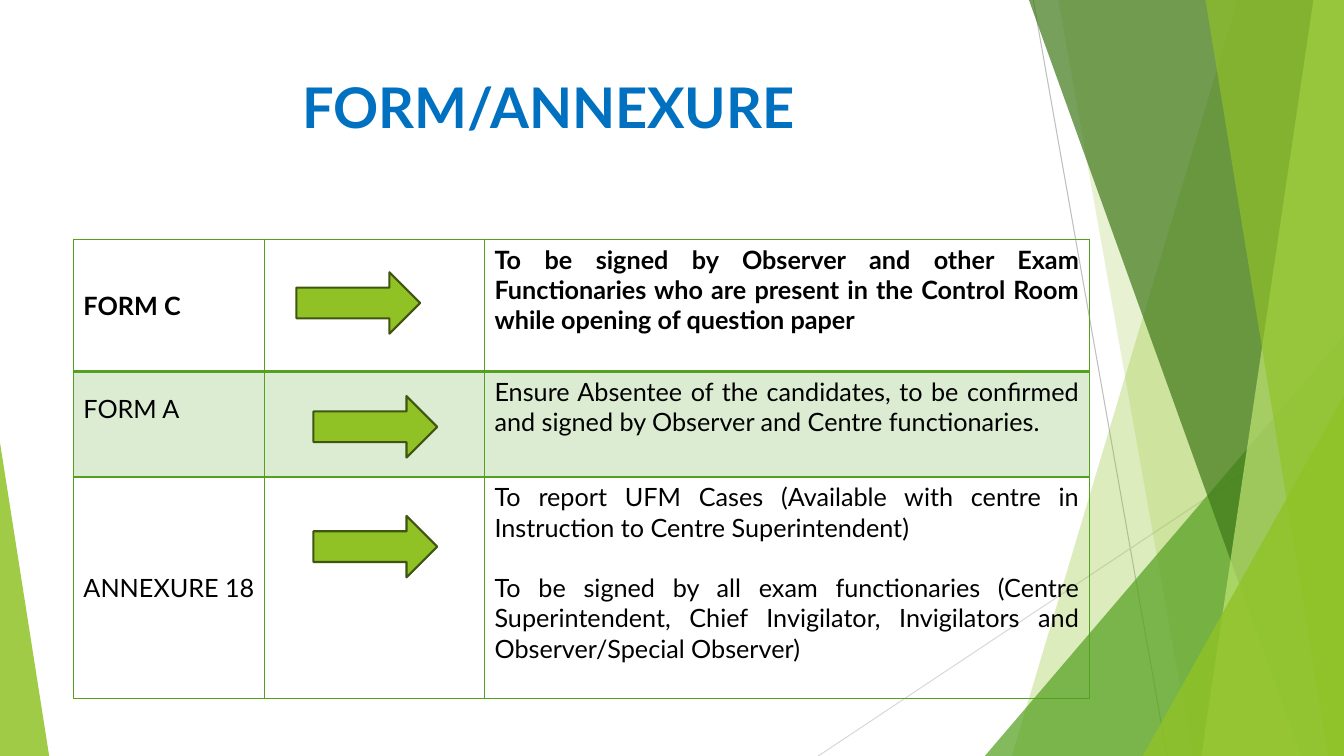
from lxml.etree import SubElement
from pptx import Presentation
from pptx.dml.color import RGBColor
from pptx.enum.shapes import MSO_CONNECTOR, MSO_SHAPE
from pptx.enum.text import MSO_ANCHOR, PP_ALIGN
from pptx.oxml import parse_xml
from pptx.oxml.ns import nsdecls, qn
from pptx.util import Cm, Pt

WIDTH, HEIGHT = 33.87, 19.05
FONT = "Lato"
LIME, GREEN = "90C226", "54A021"
ROWS = [
    ("FORM C", ["To be signed by Observer and other Exam Functionaries who are present "
                "in the Control Room while opening of question paper"]),
    ("FORM A", ["Ensure Absentee of the candidates, to be confirmed and signed by "
                "Observer and Centre functionaries."]),
    ("ANNEXURE 18", ["To report UFM Cases (Available with centre in Instruction to "
                     "Centre Superintendent)",
                     "To be signed by all exam functionaries (Centre Superintendent, "
                     "Chief Invigilator, Invigilators and Observer/Special Observer)"]),
]
COLUMN_WIDTHS = [4.82, 5.54, 15.24]
ROW_HEIGHTS = [3.33, 2.66, 5.59]


def colour(value):
    return RGBColor.from_string(value)


def paint(fill, value, opacity=100):
    fill.solid()
    fill.fore_color.rgb = colour(value)
    if opacity < 100:
        solid = fill._xPr.find(qn("a:solidFill"))
        SubElement(solid[0], qn("a:alpha"), val=str(opacity * 1000))


def add_thin_line(page, start, end, value):
    ends = [Cm(length) for length in (*start, *end)]
    line = page.shapes.add_connector(MSO_CONNECTOR.STRAIGHT, *ends)
    line.line.color.rgb = colour(value)
    line.line.width = Pt(0.75)
    SubElement(line._element.spPr, qn("a:effectLst"))


def add_facet(page, top_x, bottom_x, value, opacity):
    corners = [(Cm(x), Cm(y)) for x, y in
               ((top_x, 0), (WIDTH, 0), (WIDTH, HEIGHT), (bottom_x, HEIGHT))]
    builder = page.shapes.build_freeform(*corners[0])
    builder.add_line_segments(corners[1:], close=True)
    facet = builder.convert_to_shape()
    paint(facet.fill, value, opacity)
    facet.line.fill.background()
    facet.shadow.inherit = False


def add_triangle(page, left, top, width, apex, value, opacity):
    triangle = page.shapes.add_shape(MSO_SHAPE.ISOSCELES_TRIANGLE, Cm(left), Cm(top),
                                     Cm(width), Cm(HEIGHT - top))
    triangle.adjustments[0] = apex
    paint(triangle.fill, value, opacity)
    triangle.line.fill.background()
    triangle.shadow.inherit = False


def add_backdrop(page):
    add_thin_line(page, (26.04, 0), (29.41, HEIGHT), "BFBFBF")
    add_thin_line(page, (WIDTH, 10.24), (20.62, HEIGHT), "D9D9D9")
    add_facet(page, 31.19, 25.5, LIME, 30)
    add_facet(page, 26.67, 30.05, LIME, 20)
    add_triangle(page, 24.82, 8.46, 9.05, 1, GREEN, 72)
    add_facet(page, 25.93, 32.79, "3F7819", 70)
    add_facet(page, 33.1, 30.28, "C0E474", 70)
    add_facet(page, 30.38, 33.48, LIME, 65)
    add_triangle(page, 28.8, 9.98, 5.07, 1, LIME, 80)
    add_triangle(page, 0, 11.15, 1.24, 0, LIME, 85)


def set_title(page, text):
    title = page.shapes.title
    title.left, title.top, title.width, title.height = Cm(1.88), Cm(1.7), Cm(23.88), Cm(3.66)
    title.text_frame.text = text
    title.text_frame.vertical_anchor = MSO_ANCHOR.TOP
    para = title.text_frame.paragraphs[0]
    para.alignment = PP_ALIGN.CENTER
    para.font.name, para.font.size, para.font.bold = FONT, Pt(40), True
    para.font.color.rgb = colour("0070C0")


def set_borders(cell, top, bottom):
    properties = cell._tc.get_or_add_tcPr()
    for index, (side, points) in enumerate(zip("LRTB", (1, 1, top, bottom))):
        properties.insert(index, parse_xml(
            f'<a:ln{side} {nsdecls("a")} w="{Pt(points)}"><a:solidFill>'
            f'<a:srgbClr val="{GREEN}"/></a:solidFill></a:ln{side}>'))


def write_cell(cell, texts, alignment, bold):
    cell.text = "\n".join(texts)
    for index, para in enumerate(cell.text_frame.paragraphs):
        para.alignment = alignment
        para.space_before = Pt(21.6 if index else 0)
        para.font.name, para.font.size, para.font.bold = FONT, Pt(18), bold
        para.font.color.rgb = colour("000000")


def add_form_table(page):
    table = page.shapes.add_table(len(ROWS), len(COLUMN_WIDTHS), Cm(1.85), Cm(6.03),
                                  Cm(sum(COLUMN_WIDTHS)), Cm(sum(ROW_HEIGHTS))).table
    table.first_row = table.horz_banding = False
    for column, width in zip(table.columns, COLUMN_WIDTHS):
        column.width = Cm(width)
    for index, (form, purpose) in enumerate(ROWS):
        row = table.rows[index]
        row.height = Cm(ROW_HEIGHTS[index])
        for cell in row.cells:
            if index == 1:
                paint(cell.fill, GREEN, 20)
            else:
                cell.fill.background()
            set_borders(cell, 2 if index == 1 else 1, 2 if index == 0 else 1)
        write_cell(row.cells[0], [form], PP_ALIGN.LEFT, index == 0)
        write_cell(row.cells[2], purpose, PP_ALIGN.JUSTIFY, index == 0)
        row.cells[0].vertical_anchor = MSO_ANCHOR.MIDDLE
    table.cell(1, 0).margin_bottom = Cm(0.89)


def add_arrow(page, left, top):
    arrow = page.shapes.add_shape(MSO_SHAPE.RIGHT_ARROW, Cm(left), Cm(top), Cm(3.12), Cm(1.55))
    paint(arrow.fill, LIME)
    arrow.line.color.rgb = colour("3F5511")
    arrow.line.width = Pt(1.5)
    arrow.shadow.inherit = False


def main():
    deck = Presentation()
    deck.slide_width, deck.slide_height = Cm(WIDTH), Cm(HEIGHT)
    page = deck.slides.add_slide(deck.slide_layouts[5])
    add_backdrop(page)
    set_title(page, "FORM/ANNEXURE")
    add_form_table(page)
    for left, top in ((7.47, 6.86), (7.9, 9.98), (7.9, 13)):
        add_arrow(page, left, top)
    deck.save("out.pptx")


if __name__ == "__main__":
    main()
